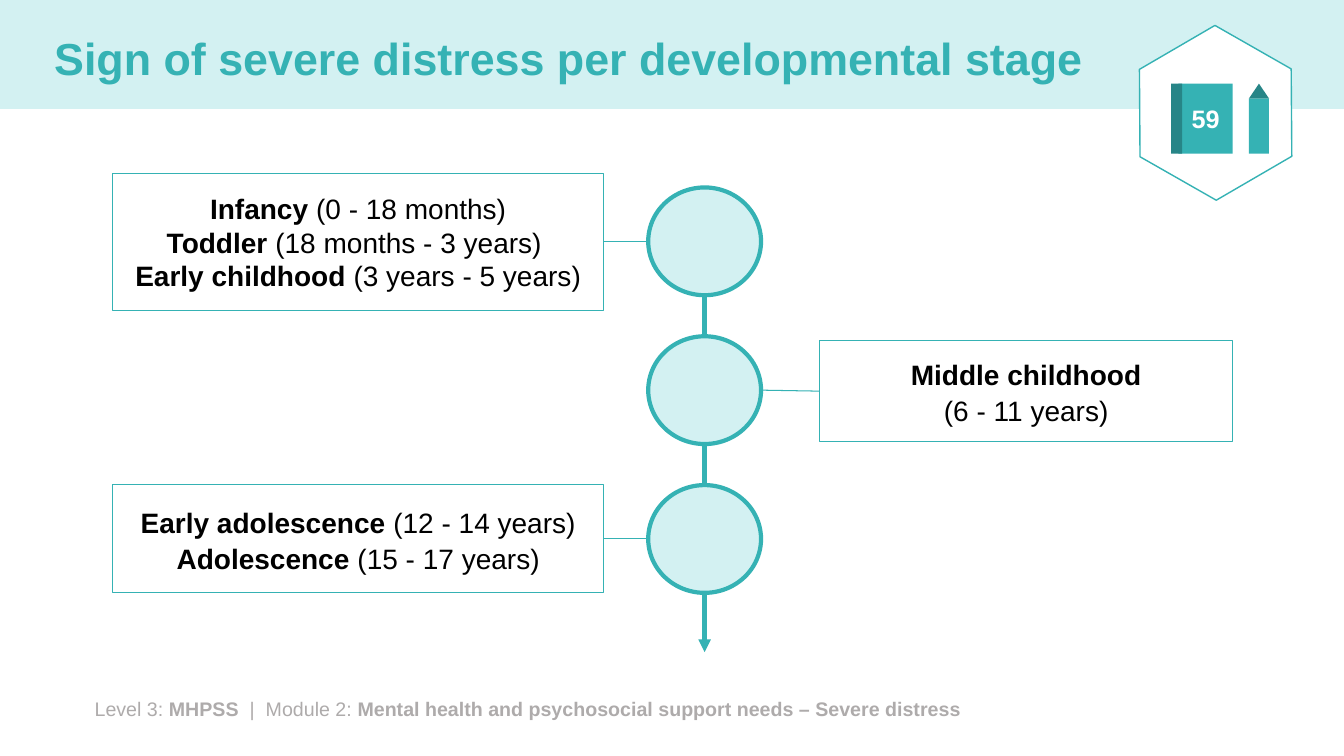
from lxml import etree
from pptx import Presentation
from pptx.dml import color
from pptx.enum import shapes, text
from pptx.oxml import ns
from pptx.util import Pt

TEAL, DARK_TEAL, PALE_TEAL = "35B2B4", "278587", "D3F1F2"
BLACK, WHITE, GREY = "000000", "FFFFFF", "AEABAB"
AXIS_X = 503.3
CIRCLE_W, CIRCLE_H = 80.6, 77
CIRCLE_TOP, CIRCLE_STEP = 133.9, 106.3

# Each stage: box left, top, width, height, line spacing, paragraphs of (words, bold) runs
STAGES = [
    (80.6, 123.8, 350.6, 97.9, 1.0, [
        [("Infancy", True), (" (0 - 18 months)", False)],
        [("Toddler ", True), ("(18 months - 3 years) ", False)],
        [("Early childhood ", True), ("(3 years - 5 years)", False)]]),
    (585.4, 243.4, 295.2, 72, 1.07, [
        [("Middle childhood", True)],
        [("(6 - 11 years)", False)]]),
    (80.6, 346.3, 350.6, 77, 1.07, [
        [("Early adolescence ", True), ("(12 - 14 years)", False)],
        [("Adolescence ", True), ("(15 - 17 years)", False)]]),
]


def rgb(value):
    """Turn a hex string into a colour."""
    return color.RGBColor.from_string(value)


def write(shape, paragraphs, size=20, ink=BLACK, centred=True, middle=True, spacing=1.0):
    """Fill a shape with paragraphs made of (words, bold) runs."""
    frame = shape.text_frame
    frame.word_wrap = True
    frame.vertical_anchor = text.MSO_ANCHOR.MIDDLE if middle else text.MSO_ANCHOR.TOP
    for index, runs in enumerate(paragraphs):
        paragraph = frame.add_paragraph() if index else frame.paragraphs[0]
        paragraph.alignment = text.PP_ALIGN.CENTER if centred else text.PP_ALIGN.LEFT
        paragraph.line_spacing = spacing
        for words, bold in runs:
            run = paragraph.add_run()
            run.text = words
            run.font.name = "Arial"
            run.font.size = Pt(size)
            run.font.bold = bold
            run.font.color.rgb = rgb(ink)


def add_label(slide, left, top, width, height, paragraphs, **style):
    """Add left-aligned text without a frame."""
    label = slide.shapes.add_textbox(Pt(left), Pt(top), Pt(width), Pt(height))
    write(label, paragraphs, centred=False, **style)


def add_block(slide, kind, left, top, width, height, fill=None, line=None, weight=0.75):
    """Add a preset shape with an optional fill and outline."""
    block = slide.shapes.add_shape(kind, Pt(left), Pt(top), Pt(width), Pt(height))
    block.shadow.inherit = False
    if fill:
        block.fill.solid()
        block.fill.fore_color.rgb = rgb(fill)
    else:
        block.fill.background()
    if line:
        block.line.color.rgb = rgb(line)
        block.line.width = Pt(weight)
    else:
        block.line.fill.background()
    return block


def add_line(slide, x1, y1, x2, y2, weight=0.75, arrow=False):
    """Add a straight teal line, with an arrowhead at its end if asked."""
    line = slide.shapes.add_connector(
        shapes.MSO_CONNECTOR.STRAIGHT, Pt(x1), Pt(y1), Pt(x2), Pt(y2))
    line.line.color.rgb = rgb(TEAL)
    line.line.width = Pt(weight)
    properties = line._element.spPr
    if arrow:
        etree.SubElement(properties.find(ns.qn("a:ln")), ns.qn("a:tailEnd"), type="triangle")
    etree.SubElement(properties, ns.qn("a:effectLst"))


def add_stage(slide, index, stage):
    """Add one developmental stage: circle, box and the line between them."""
    left, top, width, height, spacing, paragraphs = stage
    circle_top = CIRCLE_TOP + index * CIRCLE_STEP
    box = add_block(slide, shapes.MSO_SHAPE.RECTANGLE, left, top, width, height, line=TEAL)
    write(box, paragraphs, spacing=spacing)
    add_block(slide, shapes.MSO_SHAPE.OVAL, AXIS_X - CIRCLE_W / 2, circle_top,
              CIRCLE_W, CIRCLE_H, PALE_TEAL, TEAL, 3)
    middle = circle_top + CIRCLE_H / 2
    if left < AXIS_X:
        add_line(slide, left + width, middle, AXIS_X - CIRCLE_W / 2, middle)
    else:
        add_line(slide, AXIS_X + CIRCLE_W / 2, middle, left, top + height / 2)


def add_page_badge(slide):
    """Add the hexagon with the workbook page number and a pencil."""
    rectangle = shapes.MSO_SHAPE.RECTANGLE
    hexagon = add_block(slide, shapes.MSO_SHAPE.HEXAGON, 805.7, 26.6, 125.3, 108,
                        WHITE, TEAL, 1)
    hexagon.adjustments[0] = 0.29
    hexagon.adjustments[1] = 1.155
    hexagon.rotation = 29.7
    book = add_block(slide, rectangle, 841.7, 59.8, 38.9, 49.9, TEAL)
    write(book, [[("59", True)]], size=18, ink=WHITE)
    add_block(slide, rectangle, 836.6, 59.8, 7.9, 49.9, DARK_TEAL)
    add_block(slide, shapes.MSO_SHAPE.ISOSCELES_TRIANGLE, 892.1, 59.8, 14.4, 10.6, DARK_TEAL)
    add_block(slide, rectangle, 892.1, 70.4, 14.4, 39.3, TEAL)


def main():
    """Build the slide and save it."""
    deck = Presentation()
    deck.slide_width, deck.slide_height = Pt(960), Pt(540)
    slide = deck.slides.add_slide(deck.slide_layouts[6])
    add_block(slide, shapes.MSO_SHAPE.RECTANGLE, 0, 0, 960, 77.8, PALE_TEAL)
    add_label(slide, 60.5, 494.6, 817.2, 24.5, [[
        ("Level 3: ", False), ("MHPSS ", True), (" |  Module 2: ", False),
        ("Mental health and psychosocial support needs – Severe distress", True)]],
        size=14, ink=GREY, middle=False)
    add_label(slide, 31.7, 9.4, 861.8, 68.4,
              [[("Sign of severe distress per developmental stage", True)]],
              size=32, ink=TEAL, spacing=0.9)
    add_line(slide, AXIS_X, 179.3, AXIS_X, 465.8, weight=3, arrow=True)
    for index, stage in enumerate(STAGES):
        add_stage(slide, index, stage)
    add_page_badge(slide)
    deck.save("out.pptx")


if __name__ == "__main__":
    main()
